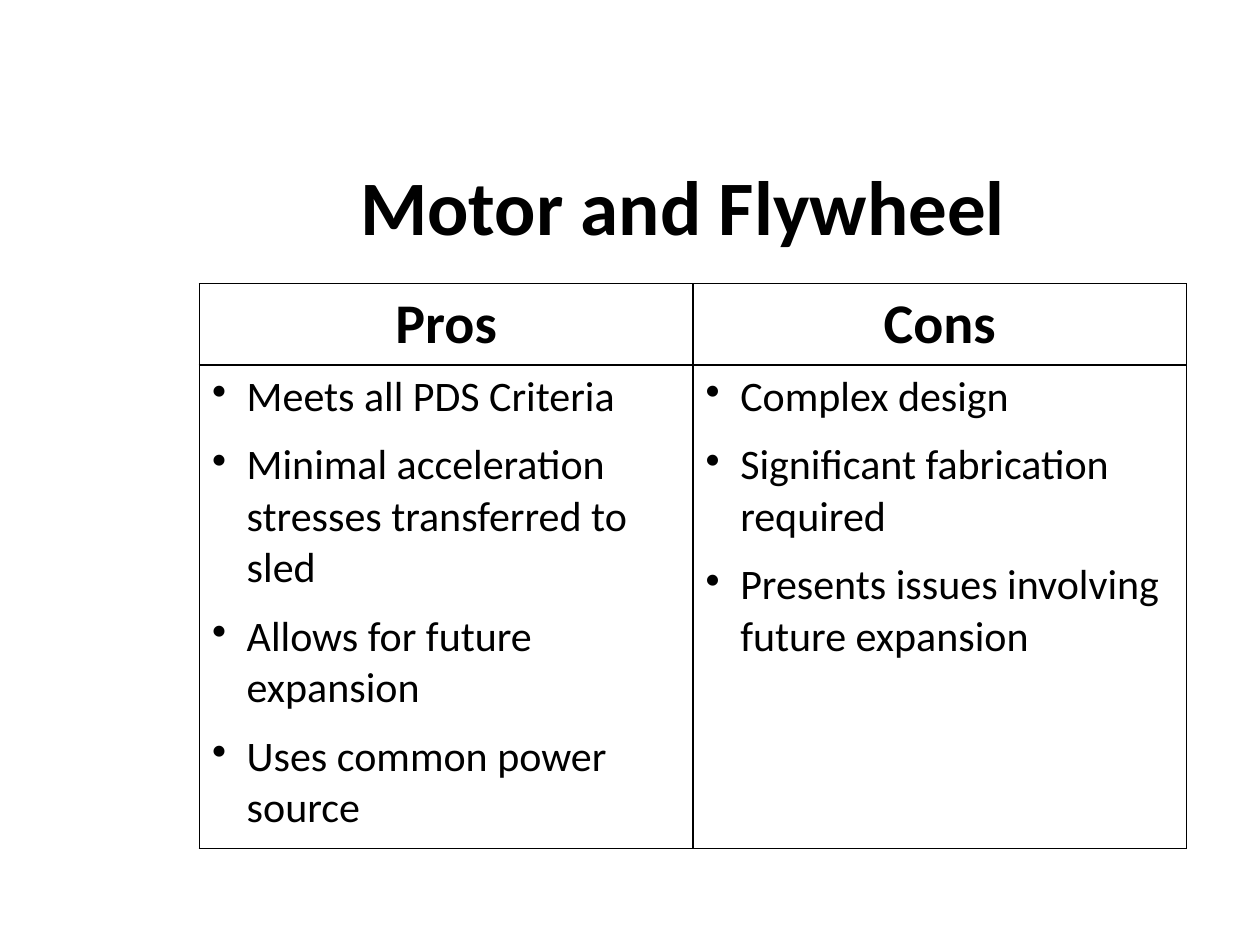
import pptx
import pptx.dml.color
import pptx.enum.text
import pptx.oxml
import pptx.oxml.ns
import pptx.util
from pptx.util import Cm

COLORS = {"text": "000000", "border": "000000", "cell": "FFFFFF"}
FONT = "Calibri"
COLUMNS = {
    "Pros": [
        "Meets all PDS Criteria",
        "Minimal acceleration stresses transferred to sled",
        "Allows for future expansion",
        "Uses common power source",
    ],
    "Cons": [
        "Complex design",
        "Significant fabrication required",
        "Presents issues involving future expansion",
    ],
}


def style_paragraph(paragraph, size, bold):
    """Set the font of a whole paragraph."""
    font = paragraph.font
    font.name = FONT
    font.size = pptx.util.Pt(size)
    font.bold = bold
    font.color.rgb = pptx.dml.color.RGBColor.from_string(COLORS["text"])


def write_heading(text_frame, text, size):
    """Write one bold centred line."""
    text_frame.text = text
    paragraph = text_frame.paragraphs[0]
    paragraph.alignment = pptx.enum.text.PP_ALIGN.CENTER
    style_paragraph(paragraph, size, True)


def write_bullets(text_frame, items):
    """Write a bulleted list with a hanging indent."""
    text_frame.text = "\n".join(items)
    for paragraph in text_frame.paragraphs:
        properties = paragraph._p.get_or_add_pPr()
        properties.set("marL", str(Cm(0.7)))
        properties.set("indent", str(-Cm(0.7)))
        bullet = pptx.oxml.parse_xml(
            f'<a:buChar {pptx.oxml.ns.nsdecls("a")} char="•"/>'
        )
        properties.append(bullet)
        paragraph.space_after = pptx.util.Pt(10)
        style_paragraph(paragraph, 24, False)


def style_cell(cell):
    """Give a cell a thin border on every side and a plain fill."""
    properties = cell._tc.get_or_add_tcPr()
    for side in ("lnL", "lnR", "lnT", "lnB"):
        border = pptx.oxml.parse_xml(
            f'<a:{side} {pptx.oxml.ns.nsdecls("a")} w="{pptx.util.Pt(1)}">'
            f'<a:solidFill><a:srgbClr val="{COLORS["border"]}"/></a:solidFill>'
            f"</a:{side}>"
        )
        properties.append(border)
    cell.fill.solid()
    cell.fill.fore_color.rgb = pptx.dml.color.RGBColor.from_string(COLORS["cell"])


def add_title(slide, text):
    """Place and fill the title placeholder."""
    title = slide.shapes.title
    title.left, title.top = Cm(2.34), Cm(2.54)
    title.width, title.height = Cm(22.86), Cm(3.18)
    title.text_frame.vertical_anchor = pptx.enum.text.MSO_ANCHOR.MIDDLE
    write_heading(title.text_frame, text, 44)


def add_comparison_table(slide, columns):
    """Add a table with one headed bullet list per column."""
    row_heights = [Cm(1.63), Cm(9.75)]
    shape = slide.shapes.add_table(
        2, len(columns), Cm(4.02), Cm(5.72), Cm(19.9), sum(row_heights)
    )
    table = shape.table
    table.first_row = table.horz_banding = False
    for row, height in zip(table.rows, row_heights):
        row.height = height
    for index, (heading, items) in enumerate(columns.items()):
        write_heading(table.cell(0, index).text_frame, heading, 32)
        write_bullets(table.cell(1, index).text_frame, items)
    for cell in table.iter_cells():
        style_cell(cell)


def main():
    """Build and save the slide."""
    presentation = pptx.Presentation()
    presentation.slide_width, presentation.slide_height = Cm(25.4), Cm(19.05)
    slide = presentation.slides.add_slide(presentation.slide_layouts[5])
    add_comparison_table(slide, COLUMNS)
    add_title(slide, "Motor and Flywheel")
    presentation.save("out.pptx")


if __name__ == "__main__":
    main()
